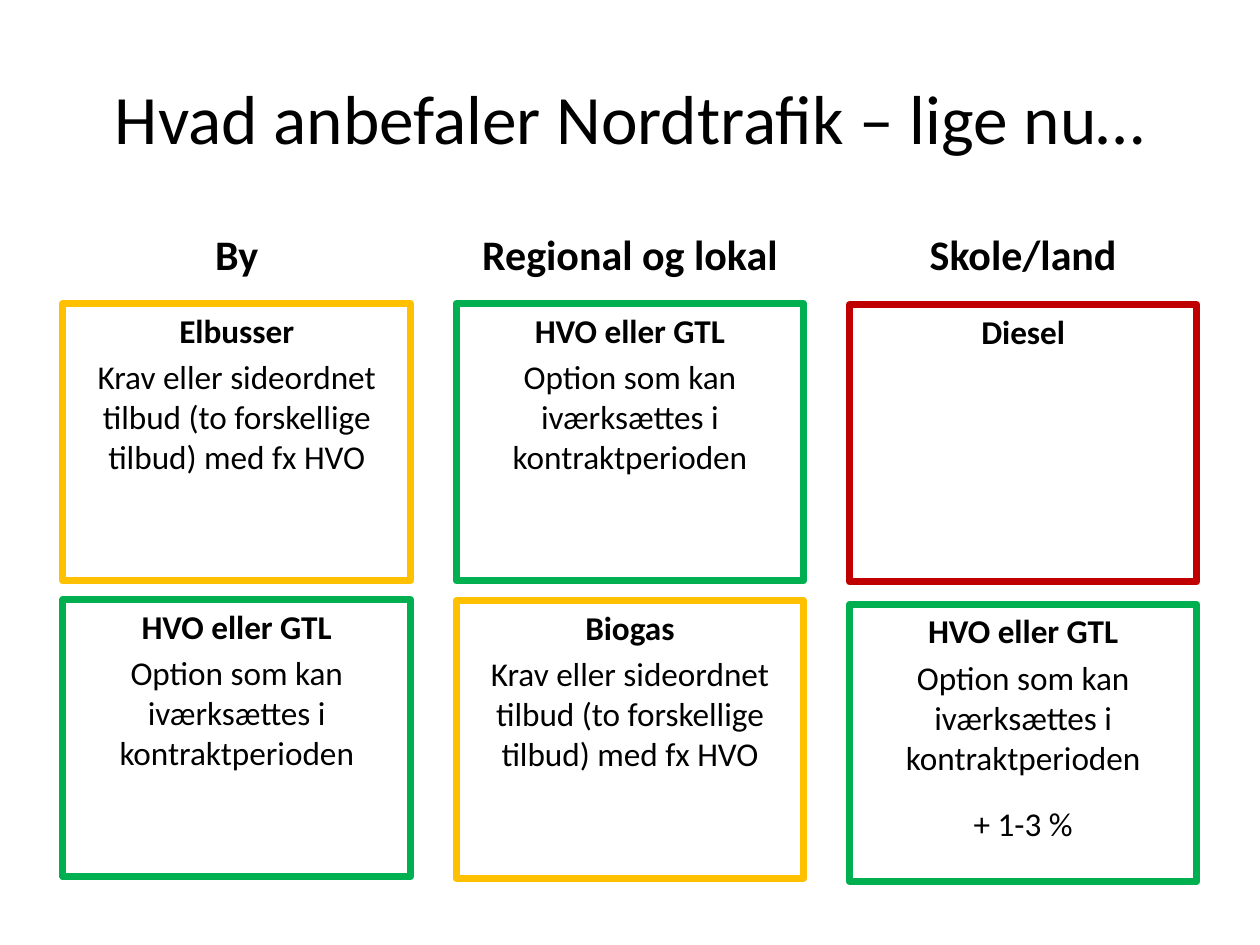
from dataclasses import dataclass

from pptx import Presentation
from pptx.dml.color import RGBColor
from pptx.enum.shapes import MSO_SHAPE
from pptx.enum.text import MSO_ANCHOR, PP_ALIGN
from pptx.util import Pt

RECT = MSO_SHAPE.RECTANGLE
TOP, MIDDLE, BOTTOM = MSO_ANCHOR.TOP, MSO_ANCHOR.MIDDLE, MSO_ANCHOR.BOTTOM
CENTER = PP_ALIGN.CENTER


@dataclass(frozen=True)
class Theme:
    font: str = "Calibri"
    text: str = "000000"
    paper: str = "FFFFFF"
    amber: str = "FFC000"
    green: str = "00B050"
    red: str = "C00000"
    title: float = 39.6
    header: float = 24
    body: float = 19
    border: float = 4
    gap: float = 3.8
    wide_gap: float = 15


class Deck:
    def __init__(self, slide, theme):
        self.slide, self.theme = slide, theme

    def block(self, x, y, w, h, anchor, border=None):
        """Add a white rectangle and return its text frame."""
        sp = self.slide.shapes.add_shape(RECT, Pt(x), Pt(y), Pt(w), Pt(h))
        sp.shadow.inherit = False
        sp.fill.solid()
        sp.fill.fore_color.rgb = RGBColor.from_string(self.theme.paper)
        if border:
            sp.line.color.rgb = RGBColor.from_string(border)
            sp.line.width = Pt(self.theme.border)
        else:
            sp.line.fill.background()
        tf = sp.text_frame
        tf.word_wrap = True
        tf.vertical_anchor = anchor
        return tf

    def add_text(self, p, text, size, bold=False, before=0):
        p.alignment = CENTER
        p.space_before = Pt(before)
        r = p.add_run()
        r.text = text
        style = {"name": self.theme.font, "size": Pt(size), "bold": bold}
        for key, value in style.items():
            setattr(r.font, key, value)
        r.font.color.rgb = RGBColor.from_string(self.theme.text)

    def title(self, text, x, y, w, h):
        tf = self.block(x, y, w, h, MIDDLE)
        self.add_text(tf.paragraphs[0], text, self.theme.title)

    def header(self, text, x, y, w, h):
        tf = self.block(x, y, w, h, BOTTOM)
        self.add_text(tf.paragraphs[0], text, self.theme.header, bold=True)

    def card(self, x, y, w, h, border, fuel, *details):
        tf = self.block(x, y, w, h, TOP, border)
        t = self.theme
        self.add_text(tf.paragraphs[0], fuel, t.body, bold=True)
        for i, detail in enumerate(details):
            before = t.wide_gap if i else t.gap
            self.add_text(tf.add_paragraph(), detail, t.body, before=before)


def main():
    prs = Presentation()
    prs.slide_width, prs.slide_height = Pt(720), Pt(540)
    theme = Theme()
    deck = Deck(prs.slides.add_slide(prs.slide_layouts[6]), theme)

    margin, content_w = 36, 648
    card_w, card_h = 198.6, 158.4
    pitch = (content_w - card_w) / 2

    demand = "Krav eller sideordnet tilbud (to forskellige tilbud) med fx HVO"
    option = "Option som kan iværksættes i kontraktperioden"
    hvo = (theme.green, "HVO eller GTL", option)
    # Each column: header, then (top, (border, fuel, details...)) per card
    columns = [
        ("By", [(173.5, (theme.amber, "Elbusser", demand)), (342.7, hvo)]),
        ("Regional og lokal",
         [(173.5, hvo), (343.4, (theme.amber, "Biogas", demand))]),
        ("Skole/land",
         [(174.2, (theme.red, "Diesel")), (345.4, (*hvo, "+ 1-3 %"))]),
    ]

    deck.title("Hvad anbefaler Nordtrafik – lige nu…", margin, 21.6, content_w, 90)
    for col, (heading, cards) in enumerate(columns):
        x = margin + col * pitch
        deck.header(heading, x, 123.1, card_w, 39.6)
        for y, content in cards:
            deck.card(x, y, card_w, card_h, *content)

    prs.save("out.pptx")


if __name__ == "__main__":
    main()
